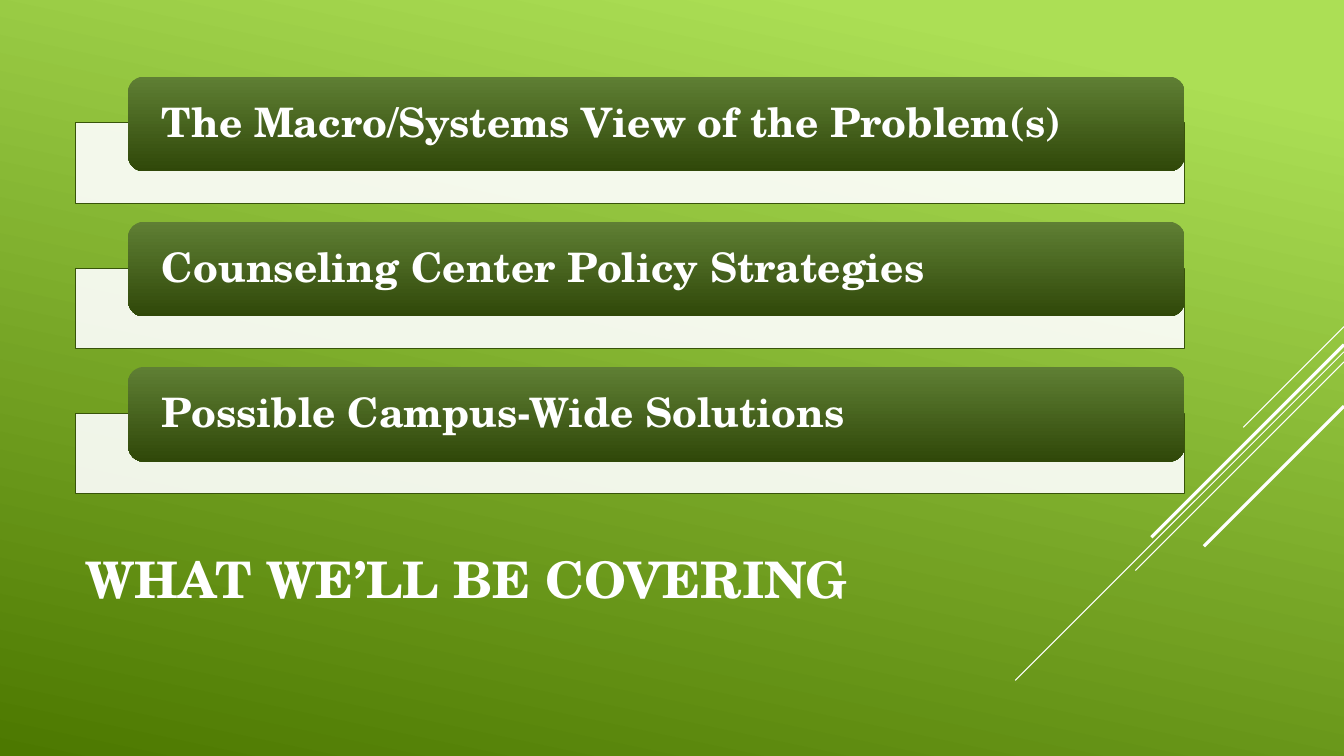
"""Build the agenda slide: three stacked topic bars above a title."""
from lxml import etree
from pptx import Presentation, util as u
from pptx.dml.color import RGBColor
from pptx.enum import shapes, text
from pptx.oxml.ns import qn

TITLE = "WHAT WE’LL BE COVERING"
TOPICS = [
    "The Macro/Systems View of the Problem(s)",
    "Counseling Center Policy Strategies",
    "Possible Campus-Wide Solutions",
]
HUES = {"white": "FFFFFF", "edge": "38540A", "lime": "ACDF55",
        "leaf": "4C7800", "moss": "5F7F34", "pine": "304809"}
FONT = "TeX Gyre Schola"
WIDE, HIGH = 13.33, 7.5
LEFT, RIGHT = 0.75, 11.75
TOP, PITCH = 0.76, 1.44
PILL = {"left": 1.27, "high": 0.94}
BAR = {"drop": 0.46, "high": 0.8}
RAYS = [(3.24, 1, 0.75), (3.49, 3.26, 0.75), (3.59, 2.07, 0.75),
        (3.42, 1.91, 2.25), (4.03, 1.39, 2.25)]


def hue(name):
    return RGBColor.from_string(HUES[name])


def inch(*vals):
    return [u.Inches(v) for v in vals]


def blend(fill, stops, angle):
    fill.gradient()
    fill.gradient_angle = 360 - angle
    for stop, (place, name) in zip(fill.gradient_stops, stops):
        stop.position = place
        stop.color.rgb = hue(name)


def write(shape, words, size, pad, space):
    frame = shape.text_frame
    form = {"word_wrap": True, "vertical_anchor": text.MSO_ANCHOR.MIDDLE,
            "margin_left": u.Inches(pad), "margin_right": u.Inches(pad),
            "margin_top": 0, "margin_bottom": 0}
    for key, val in form.items():
        setattr(frame, key, val)
    para = frame.paragraphs[0]
    para.alignment = text.PP_ALIGN.LEFT
    para.line_spacing = space
    run = para.add_run()
    run.text = words
    for key, val in {"name": FONT, "size": u.Pt(size), "bold": True}.items():
        setattr(run.font, key, val)
    run.font.color.rgb = hue("white")


def ray(slide, top, span, width):
    ends = inch(WIDE, top, WIDE - span, top + span)
    line = slide.shapes.add_connector(shapes.MSO_CONNECTOR.STRAIGHT, *ends)
    line.line.color.rgb = hue("white")
    line.line.width = u.Pt(width)
    etree.SubElement(line._element.spPr, qn("a:effectLst"))


def topic(slide, row, words):
    top = TOP + row * PITCH
    kinds = shapes.MSO_SHAPE
    bar = slide.shapes.add_shape(kinds.RECTANGLE, *inch(
        LEFT, top + BAR["drop"], RIGHT - LEFT, BAR["high"]))
    bar.shadow.inherit = False
    bar.fill.solid()
    bar.fill.fore_color.rgb = hue("white")
    tint = bar._element.spPr.find(".//" + qn("a:srgbClr"))
    etree.SubElement(tint, qn("a:alpha"), val="90000")
    bar.line.color.rgb = hue("edge")
    bar.line.width = u.Pt(0.75)
    pill = slide.shapes.add_shape(kinds.ROUNDED_RECTANGLE, *inch(
        PILL["left"], top, RIGHT - PILL["left"], PILL["high"]))
    pill.shadow.inherit = False
    blend(pill.fill, [(0, "moss"), (1, "pine")], 90)
    pill.line.fill.background()
    write(pill, words, 29, 0.29, 0.9)


def main():
    deck = Presentation()
    deck.slide_width, deck.slide_height = inch(WIDE, HIGH)
    slide = deck.slides.add_slide(deck.slide_layouts[6])
    blend(slide.background.fill, [(0.1, "lime"), (1, "leaf")], 102)
    for spec_row in RAYS:
        ray(slide, *spec_row)
    title = slide.shapes.add_textbox(*inch(LEFT, 4.91, 9.33, 1.65))
    write(title, TITLE, 36, 0.1, 1)
    for row, words in enumerate(TOPICS):
        topic(slide, row, words)
    deck.save("out.pptx")


if __name__ == "__main__":
    main()
